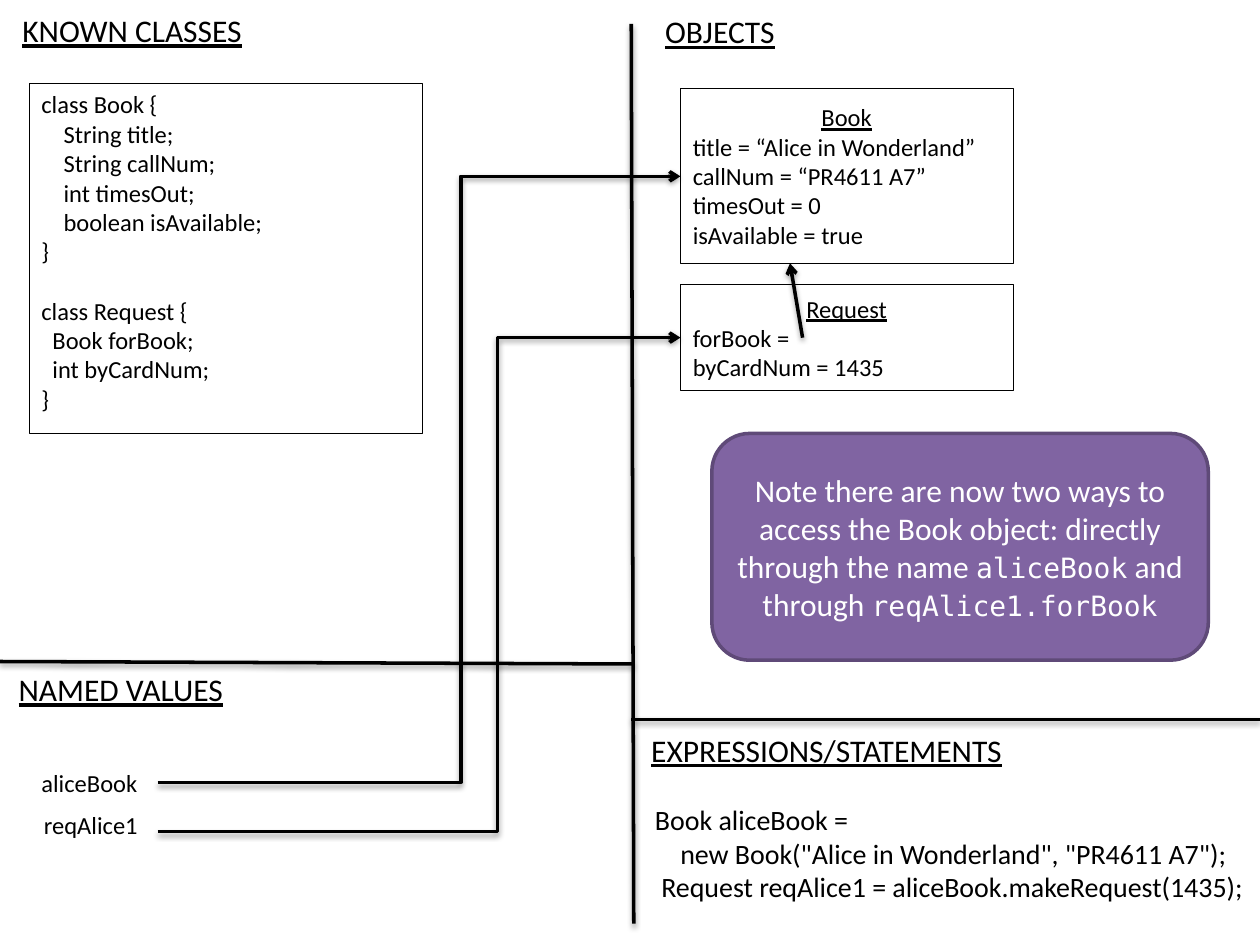
import pptx
import pptx.util
import pptx.dml.color
import pptx.enum.shapes
import pptx.enum.text
import pptx.oxml
import pptx.oxml.ns

COLORS = {"ink": "000000", "note": "8064A2", "note_edge": "5F4A78", "light": "FFFFFF"}
BODY, CODE = "Calibri", "DejaVu Sans Mono"
SHAPE = pptx.enum.shapes.MSO_SHAPE
CONNECTOR = pptx.enum.shapes.MSO_CONNECTOR
ANCHOR = pptx.enum.text.MSO_ANCHOR
ALIGN = pptx.enum.text.PP_ALIGN
RGB = pptx.dml.color.RGBColor.from_string

deck = pptx.Presentation()
deck.slide_width = pptx.util.Inches(10)
deck.slide_height = pptx.util.Inches(7.5)
slide = deck.slides.add_slide(deck.slide_layouts[6])

# Grid of 100 columns by 75 rows with square cells
CELL = deck.slide_width // 100


def write(frame, lines, size, anchor=ANCHOR.TOP, underline_first=False):
    """Fill a frame with (text, indent in spaces) lines."""
    frame.vertical_anchor = anchor
    frame.text = "\n".join(text for text, _ in lines)
    for number, (paragraph, (_, spaces)) in enumerate(zip(frame.paragraphs, lines)):
        paragraph.alignment = ALIGN.LEFT
        if spaces:
            indent = pptx.util.Pt(round(spaces * size * 0.226, 2))
            paragraph._p.get_or_add_pPr().set("marL", str(indent))
        font = paragraph.runs[0].font
        font.name, font.size = BODY, pptx.util.Pt(size)
        font.color.rgb = RGB(COLORS["ink"])
        font.underline = underline_first and number == 0


def connect(kind, start, end, arrow=False, bend=None):
    """Draw a shadowed line between two (column, row) points."""
    line = slide.shapes.add_connector(kind, *(int(v * CELL) for v in start + end))
    line.line.width = pptx.util.Pt(2)
    line.line.color.rgb = RGB(COLORS["ink"])
    properties = line._element.spPr
    namespace = pptx.oxml.ns.nsdecls("a")
    if arrow:
        line.line._get_or_add_ln().append(
            pptx.oxml.parse_xml(f'<a:tailEnd {namespace} type="arrow"/>'))
    if bend:
        guides = properties.find(".//" + pptx.oxml.ns.qn("a:avLst"))
        guides.append(pptx.oxml.parse_xml(
            f'<a:gd {namespace} name="adj1" fmla="val {round(bend * 100000)}"/>'))
    properties.append(pptx.oxml.parse_xml(
        f'<a:effectLst {namespace}><a:outerShdw blurRad="{pptx.util.Pt(3.1)}" '
        f'dist="{pptx.util.Pt(1.6)}" dir="5400000" rotWithShape="0">'
        f'<a:srgbClr val="{COLORS["ink"]}"><a:alpha val="38000"/></a:srgbClr>'
        '</a:outerShdw></a:effectLst>'))


# Headings of the four areas
for heading, left, top, width in [
    ("KNOWN CLASSES", 0.8, 0.4, 19.7),
    ("OBJECTS", 51.8, 0.5, 10.9),
    ("NAMED VALUES", 0.5, 52.7, 18.6),
    ("EXPRESSIONS/STATEMENTS", 50.7, 57.5, 30.6),
]:
    area = slide.shapes.add_textbox(*(int(v * CELL) for v in (left, top, width, 4)))
    area.text_frame.word_wrap = False
    write(area.text_frame, [(heading, 0)], 18, underline_first=True)

# Lines between the areas
for start, end in [
    ((50.1, 1.9), (50.3, 73.3)),
    ((0, 52.5), (50.3, 52.7)),
    ((50.1, 57.1), (100, 57.1)),
]:
    connect(CONNECTOR.STRAIGHT, start, end)

# Class definitions and the two objects
class_lines = [
    ("class Book {", 0), ("String title;", 4), ("String callNum;", 4),
    ("int timesOut;", 4), ("boolean isAvailable;", 4), ("}", 0),
    ("class Request {", 0), ("Book forBook;", 2), ("int byCardNum;", 2), ("}", 0),
]
book_lines = [
    ("Book", 0), ("title = “Alice in Wonderland”", 0), ("callNum = “PR4611 A7”", 0),
    ("timesOut = 0", 0), ("isAvailable = true", 0),
]
request_lines = [("Request", 0), ("forBook =", 0), ("byCardNum = 1435", 0)]
for lines, place, is_object in [
    (class_lines, (2.3, 6.6, 31.2, 27.8), False),
    (book_lines, (54, 7, 26.4, 13.9), True),
    (request_lines, (54, 22.6, 26.4, 8.4), True),
]:
    box = slide.shapes.add_shape(SHAPE.RECTANGLE, *(int(v * CELL) for v in place))
    box.shadow.inherit = False
    box.fill.background()
    box.line.color.rgb = RGB(COLORS["ink"])
    box.line.width = pptx.util.Pt(0.5)
    write(box.text_frame, lines, 14, ANCHOR.MIDDLE if is_object else ANCHOR.TOP, is_object)
    if is_object:
        box.text_frame.paragraphs[0].alignment = ALIGN.CENTER
    else:
        box.text_frame.paragraphs[6].space_before = pptx.util.Pt(17)

# Note
note = slide.shapes.add_shape(
    SHAPE.ROUNDED_RECTANGLE, *(int(v * CELL) for v in (56.5, 34.4, 39.4, 18)))
note.shadow.inherit = False
note.fill.solid()
note.fill.fore_color.rgb = RGB(COLORS["note"])
note.line.color.rgb = RGB(COLORS["note_edge"])
note.line.width = pptx.util.Pt(2)
note.text_frame.vertical_anchor = ANCHOR.MIDDLE
message = note.text_frame.paragraphs[0]
message.alignment = ALIGN.CENTER
for words, typeface, size in [
    ("Note there are now two ways to access the Book object: directly through the name ",
     BODY, 18),
    ("aliceBook", CODE, 16),
    (" and through ", BODY, 18),
    ("reqAlice1.forBook", CODE, 16),
]:
    run = message.add_run()
    run.text = words
    run.font.name, run.font.size = typeface, pptx.util.Pt(size)
    run.font.color.rgb = RGB(COLORS["light"])

# Names and statements
statements = [
    ("Book aliceBook =", 0),
    ('new Book("Alice in Wonderland", "PR4611 A7");', 4),
    ("Request reqAlice1 = aliceBook.makeRequest(1435);", 1),
]
for lines, place, size, anchor in [
    ([("aliceBook", 0)], (2.3, 59.8, 10.1, 4.7), 14, ANCHOR.MIDDLE),
    ([("reqAlice1", 0)], (2.5, 63.1, 10.1, 4.7), 14, ANCHOR.MIDDLE),
    (statements, (51, 63.2, 49, 9.1), 16, ANCHOR.TOP),
]:
    label = slide.shapes.add_textbox(*(int(v * CELL) for v in place))
    label.text_frame.word_wrap = True
    write(label.text_frame, lines, size, anchor)

# References from names to objects, and from the request to its book
connect(CONNECTOR.ELBOW, (12.5, 62.1), (54, 14), arrow=True, bend=0.58)
connect(CONNECTOR.ELBOW, (12.5, 66), (54, 26.8), arrow=True, bend=0.65)
connect(CONNECTOR.STRAIGHT, (63.7, 26.8), (62.7, 20.9), arrow=True)

deck.save("out.pptx")
